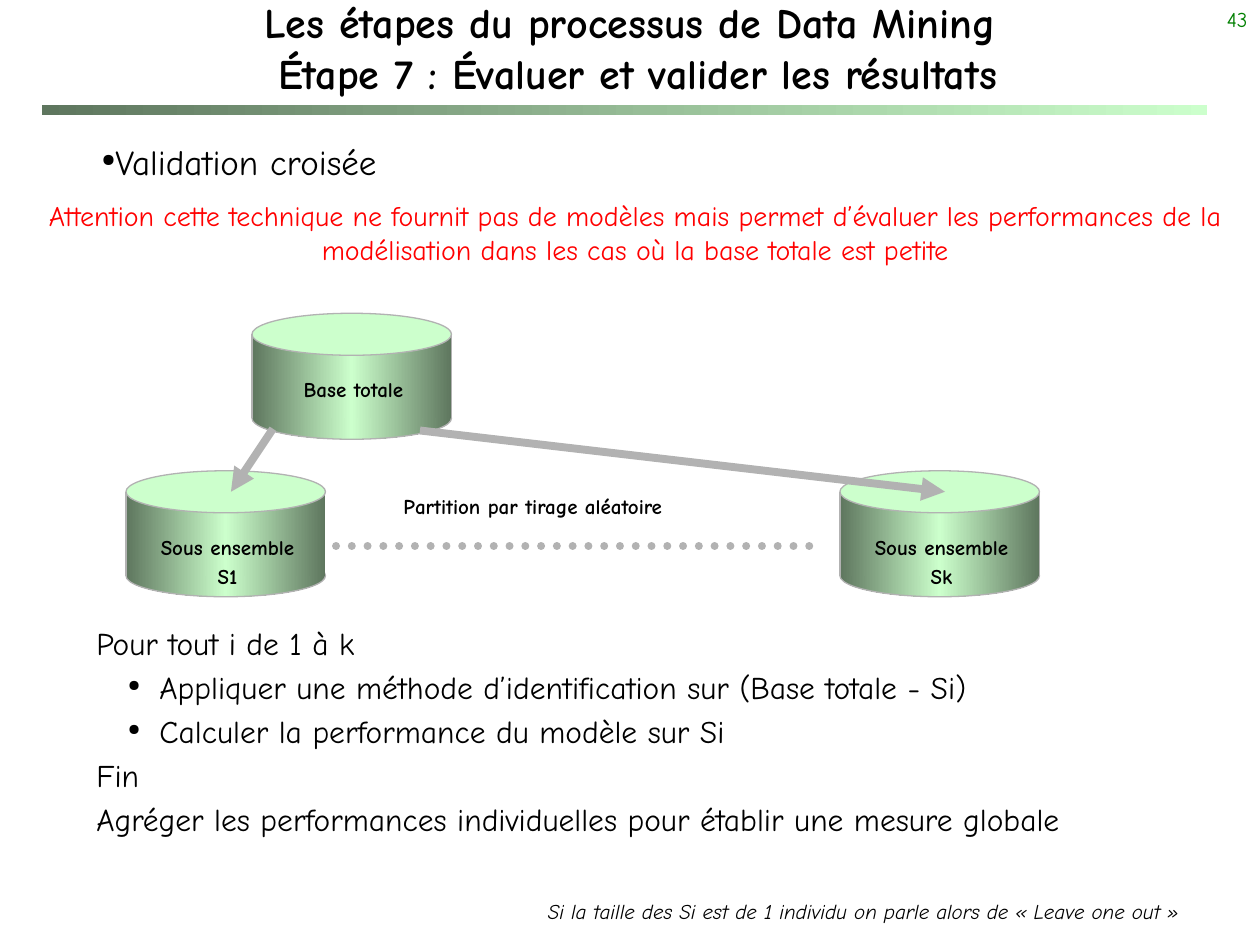
"""Build a slide on cross-validation in the data mining process."""
from copy import deepcopy

from lxml import etree
from pptx import Presentation
from pptx.dml.color import RGBColor
from pptx.enum.dml import MSO_LINE
from pptx.enum.shapes import MSO_CONNECTOR, MSO_SHAPE
from pptx.enum.text import MSO_ANCHOR, PP_ALIGN
from pptx.oxml.ns import qn
from pptx.util import Pt

LEFT, CENTER, RIGHT = PP_ALIGN.LEFT, PP_ALIGN.CENTER, PP_ALIGN.RIGHT
RECT, OVAL = MSO_SHAPE.RECTANGLE, MSO_SHAPE.OVAL
STRAIGHT = MSO_CONNECTOR.STRAIGHT
MIDDLE = MSO_ANCHOR.MIDDLE
DOTS = MSO_LINE.ROUND_DOT
FONT = "Comic Neue"
BLACK, RED, GREEN = "000000", "FF0000", "008000"
GREY, DARK, LIGHT = "B2B2B2", "5E765E", "CCFFCC"
rgb = RGBColor.from_string

prs = Presentation()
prs.slide_width, prs.slide_height = Pt(720), Pt(540)
slide = prs.slides.add_slide(prs.slide_layouts[6])
shapes = slide.shapes


def add_text(box, lines, size, color=BLACK, align=LEFT, bold=False,
             italic=False, wrap=True, before=0.2):
    frame = shapes.add_textbox(*map(Pt, box)).text_frame
    frame.word_wrap = wrap
    for index, line in enumerate(lines):
        paragraph = frame.paragraphs[0] if index == 0 else frame.add_paragraph()
        paragraph.alignment = align
        paragraph.space_before = Pt(before * size)
        for part, words in enumerate(line.split("\n")):
            if part:
                paragraph.add_line_break()
            run = paragraph.add_run()
            run.text = words
            run.font.name, run.font.size = FONT, Pt(size)
            run.font.bold, run.font.italic = bold, italic
            run.font.color.rgb = rgb(color)
    return frame


def add_line(x1, y1, x2, y2, width, arrow=False):
    line = shapes.add_connector(STRAIGHT, Pt(x1), Pt(y1), Pt(x2), Pt(y2))
    line.line.color.rgb = rgb(GREY)
    line.line.width = Pt(width)
    if arrow:
        etree.SubElement(line.line._get_or_add_ln(), qn("a:tailEnd"), type="triangle")
    etree.SubElement(line._element.spPr, qn("a:effectLst"))
    return line


title_bar = shapes.add_shape(RECT, Pt(24), Pt(60), Pt(666), Pt(6))
title_bar.line.fill.background()
title_bar.shadow.inherit = False
gradients = [(title_bar, [DARK, LIGHT])]

add_text((570, 0, 150, 36), ["43"], 12, GREEN, RIGHT, before=0)
title = add_text(
    (0, 6, 720, 42),
    ["Les étapes du processus de Data Mining\n Étape 7 : Évaluer et valider les résultats"],
    24, align=CENTER, bold=True, before=0)
title.vertical_anchor = MIDDLE

heading = add_text((36, 72, 612, 48), ["Validation croisée"], 20).paragraphs[0]
heading.line_spacing = 1.2
add_text(
    (18, 110, 690, 46),
    ["Attention cette technique ne fournit pas de modèles mais permet d’évaluer "
     "les performances de la modélisation dans les cas où la base totale est petite"],
    16, RED, CENTER)

cylinder_width, body_height, cap_height = 114, 48, 24
cylinders = [
    (72, 269, ["Sous ensemble", "S1"], [0]),
    (144, 179, ["Base totale"], [0, cylinder_width]),
    (480, 269, ["Sous ensemble", "Sk"], [0, cylinder_width]),
]
for left, top, label, edges in cylinders:
    body_top = top + cap_height / 2
    for kind, part_top, height, shaded in [
            (OVAL, top + body_height, cap_height, True),
            (RECT, body_top, body_height, True),
            (OVAL, top, cap_height, False)]:
        part = shapes.add_shape(kind, Pt(left), Pt(part_top), Pt(cylinder_width), Pt(height))
        part.shadow.inherit = False
        if shaded:
            gradients.append((part, [DARK, LIGHT, DARK]))
        else:
            part.fill.solid()
            part.fill.fore_color.rgb = rgb(LIGHT)
        if kind == OVAL:
            part.line.color.rgb = rgb(GREY)
            part.line.width = Pt(0.75)
        else:
            part.line.fill.background()
    for edge in edges:
        add_line(left + edge, body_top, left + edge, body_top + body_height, 0.75)
    add_text((left + 9, top + 32.7, 98, 22 + 17 * (len(label) - 1)), label, 12,
             align=CENTER, bold=True, wrap=False)

for shape, colors in gradients:
    shape.fill.gradient()
    shape.fill.gradient_angle = 0
    stop_list = shape._element.xpath(".//a:gsLst")[0]
    while len(stop_list) < len(colors):
        stop_list.append(deepcopy(stop_list[-1]))
    for index, stop in enumerate(shape.fill.gradient_stops):
        stop.color.rgb = rgb(colors[index])
        stop.position = index / (len(colors) - 1)

add_line(240, 246, 540, 281, 4.5, arrow=True)
add_line(156, 245, 132, 281, 4.5, arrow=True)
add_text((212.5, 278.7, 184, 22), ["Partition par tirage aléatoire"], 12,
         align=CENTER, bold=True, wrap=False)
ellipsis = add_line(192, 312, 468, 312, 4.5)
ellipsis.line.dash_style = DOTS
ellipsis.line._get_or_add_ln().set("cap", "rnd")

algorithm = add_text(
    (48, 353, 636, 133),
    ["Pour tout i de 1 à k",
     "Appliquer une méthode d’identification sur (Base totale - Si)",
     "Calculer la performance du modèle sur Si",
     "Fin",
     "Agréger les performances individuelles pour établir une mesure globale"],
    18)
bulleted = [(heading, 0, 15)] + [(step, 36, -18) for step in algorithm.paragraphs[1:3]]
for paragraph, margin, indent in bulleted:
    properties = paragraph._p.get_or_add_pPr()
    properties.set("marL", str(Pt(margin)))
    properties.set("indent", str(Pt(indent)))
    etree.SubElement(properties, qn("a:buSzPct"), val="50000")
    etree.SubElement(properties, qn("a:buChar"), char="●")

add_text((306, 510, 408, 22),
         ["Si la taille des Si est de 1 individu on parle alors de « Leave one out »"],
         12, italic=True)

prs.save("out.pptx")
